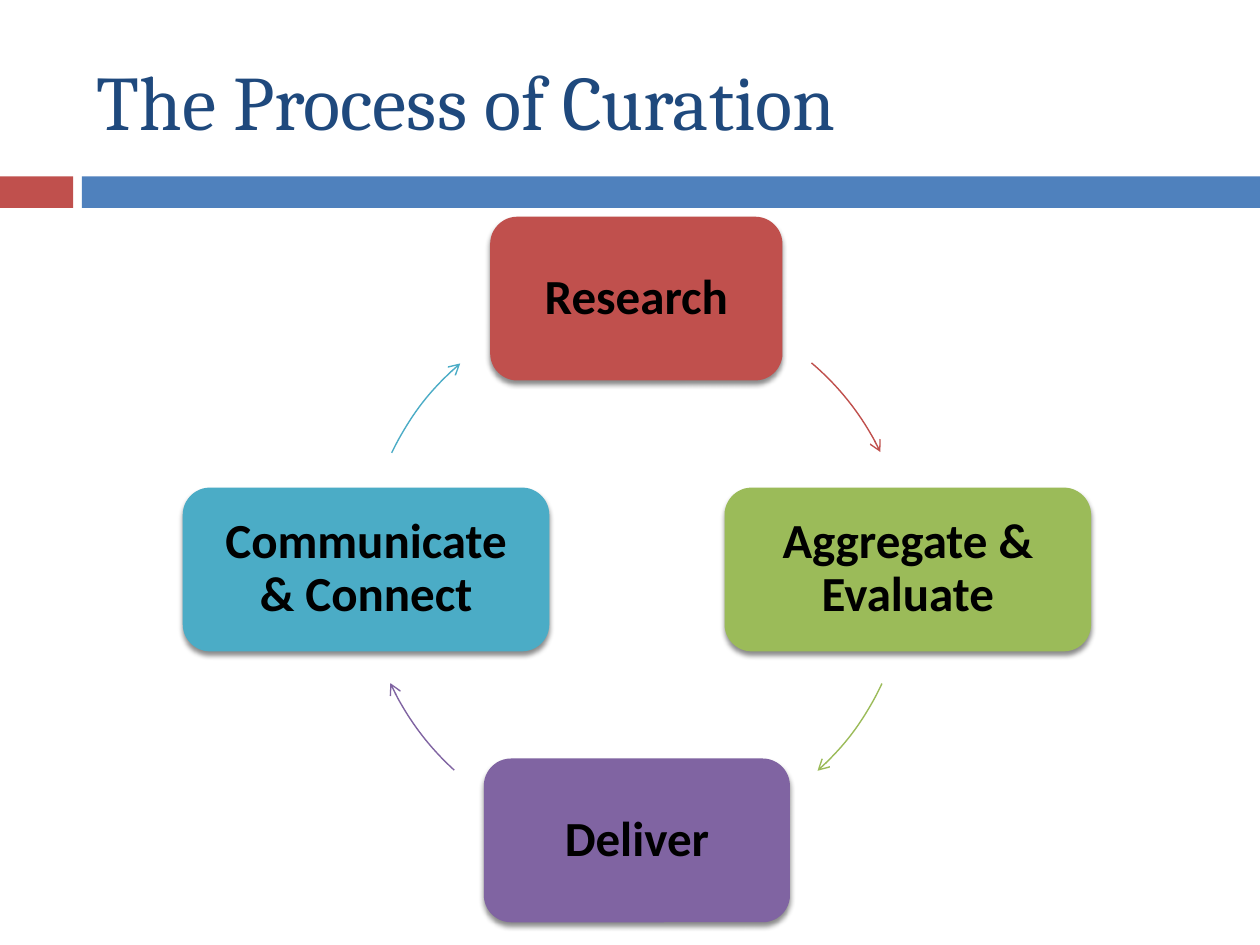
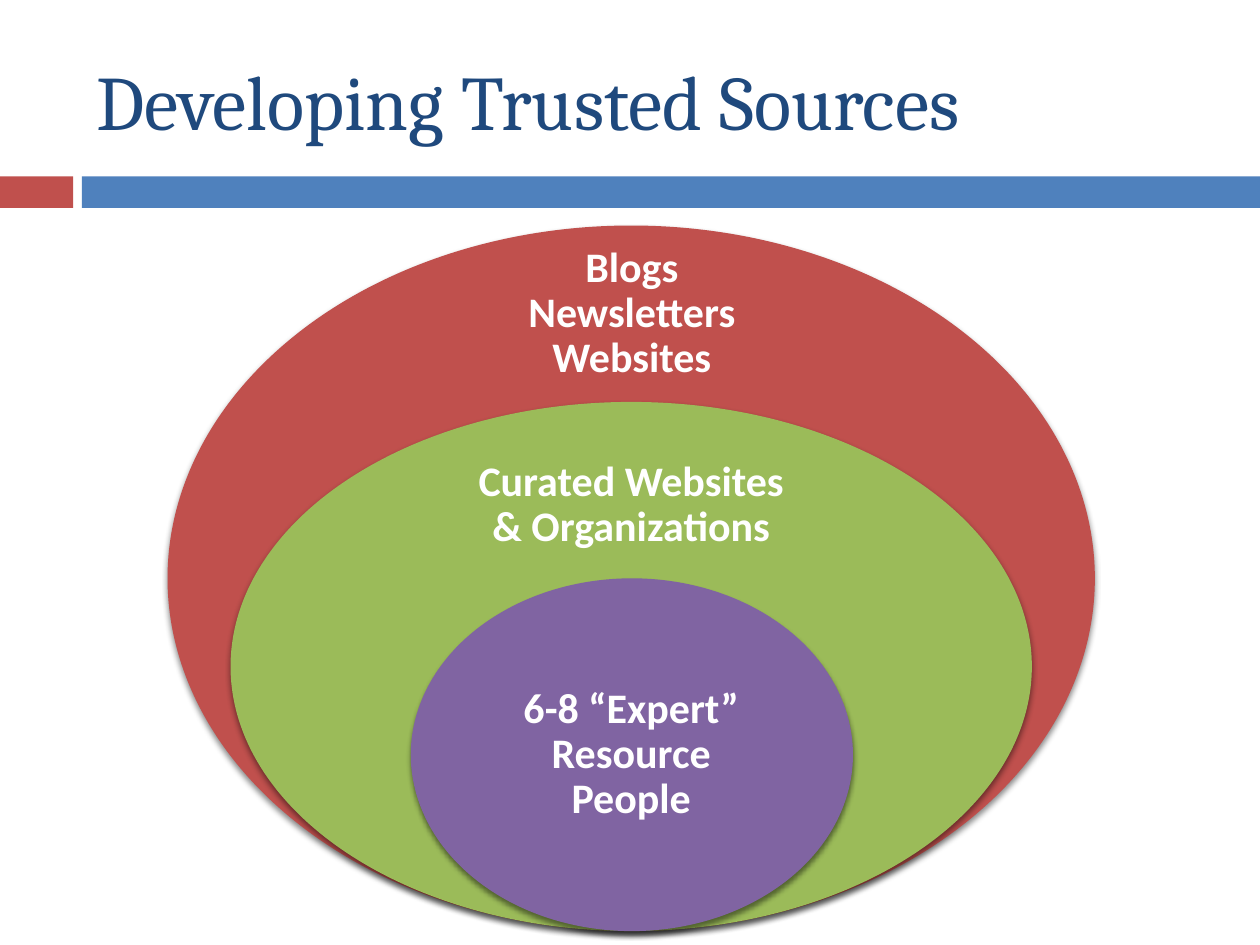
from dataclasses import dataclass

from lxml.etree import SubElement
from pptx import Presentation
from pptx.dml.color import RGBColor
from pptx.enum.shapes import MSO_SHAPE
from pptx.enum.text import MSO_ANCHOR, PP_ALIGN
from pptx.oxml.ns import qn
from pptx.util import Pt

PX = 9144  # EMU in one px, 100 px to the inch


@dataclass(frozen=True)
class Theme:
    red: str = "C0504D"
    blue: str = "4F81BD"
    green: str = "9BBB59"
    purple: str = "8064A2"
    teal: str = "4BACC6"
    navy: str = "1F497D"
    black: str = "000000"
    white: str = "FFFFFF"
    heading_font: str = "Cambria"
    body_font: str = "Calibri"
    title_size: int = 44
    step_size: int = 28
    source_size: int = 24
    arrow_width: float = 0.79


THEME = Theme()


def add_block(slide, preset, box, color, shadow=False):
    """Add a filled preset shape without outline, with a soft shadow below on request."""
    shape = slide.shapes.add_shape(preset, *[length * PX for length in box])
    shape.fill.solid()
    shape.fill.fore_color.rgb = RGBColor.from_string(color)
    shape.line.fill.background()
    shape.shadow.inherit = False
    if shadow:
        effects = shape._element.spPr.find(qn("a:effectLst"))
        outer = SubElement(effects, qn("a:outerShdw"), blurRad=str(Pt(3)),
                           dist=str(Pt(2.4)), dir="5400000", rotWithShape="0")
        shadow_color = SubElement(outer, qn("a:srgbClr"), val=THEME.black)
        SubElement(shadow_color, qn("a:alpha"), val="45000")
    return shape


def write_text(shape, text, *, size, color, font=THEME.body_font, bold=True,
               align=PP_ALIGN.CENTER, anchor=MSO_ANCHOR.MIDDLE, spacing=0.9, inset=12):
    frame = shape.text_frame
    frame.word_wrap = True
    frame.vertical_anchor = anchor
    frame.margin_left = frame.margin_right = inset * PX
    frame.margin_top = frame.margin_bottom = inset * PX
    paragraph = frame.paragraphs[0]
    paragraph.text = text
    paragraph.alignment = align
    paragraph.line_spacing = spacing
    paragraph.font.name = font
    paragraph.font.size = Pt(size)
    paragraph.font.bold = bold
    paragraph.font.color.rgb = RGBColor.from_string(color)


presentation = Presentation()
presentation.slide_width = 1000 * PX
presentation.slide_height = 750 * PX

# Shared frame: two bands and the title
slides = []
for title in ("The Process of Curation", "Developing Trusted Sources"):
    slide = presentation.slides.add_slide(presentation.slide_layouts[6])
    add_block(slide, MSO_SHAPE.RECTANGLE, (0, 140, 58, 25), THEME.red)
    add_block(slide, MSO_SHAPE.RECTANGLE, (65, 140, 935, 25), THEME.blue)
    title_box = slide.shapes.add_textbox(67 * PX, 25 * PX, 892 * PX, 108 * PX)
    write_text(title_box, title, size=THEME.title_size, color=THEME.navy,
               font=THEME.heading_font, bold=False, align=PP_ALIGN.LEFT,
               spacing=1.0, inset=10)
    slides.append(slide)
process_slide, sources_slide = slides

# Cycle: each step sits on a circle and an arc leads on to the next one
CENTER_X, CENTER_Y, RADIUS = 505, 452, 215
STEP_HEIGHT = 130
steps = [  # text, color, centre offset in radii, width, arc start and end in degrees
    ("Research", THEME.red, (0, -1), 232, (310.3, 334.3)),
    ("Aggregate & Evaluate", THEME.green, (1, 0), 291, (24.9, 48)),
    ("Deliver", THEME.purple, (0, 1), 243, (132.2, 155.2)),
    ("Communicate & Connect", THEME.teal, (-1, 0), 291, (205.5, 229.5)),
]
for text, color, (across, down), width, angles in steps:
    left = CENTER_X + across * RADIUS - width // 2
    top = CENTER_Y + down * RADIUS - STEP_HEIGHT // 2
    step = add_block(process_slide, MSO_SHAPE.ROUNDED_RECTANGLE,
                     (left, top, width, STEP_HEIGHT), color, shadow=True)
    write_text(step, text, size=THEME.step_size, color=THEME.black)

    circle_box = (CENTER_X - RADIUS, CENTER_Y - RADIUS, 2 * RADIUS, 2 * RADIUS)
    arrow = add_block(process_slide, MSO_SHAPE.ARC, circle_box, color)
    arrow.fill.background()
    arrow.line.color.rgb = RGBColor.from_string(color)
    arrow.line.width = Pt(THEME.arrow_width)
    for index, angle in enumerate(angles):
        arrow.adjustments[index] = angle * 0.6  # 60000ths of a degree over 100000
    SubElement(arrow.line._get_or_add_ln(), qn("a:tailEnd"), type="arrow")

# Nested ellipses resting on one bottom line
MIDDLE_X, BOTTOM = 501, 739
sources = [  # text, color, ellipse size, text box top and size, anchor
    ("Blogs Newsletters Websites", THEME.red, (736, 560),
     (207, 257, 84), MSO_ANCHOR.MIDDLE),
    ("Curated Websites & Organizations", THEME.green, (636, 420),
     (346, 296, 79), MSO_ANCHOR.TOP),
    ("6-8 “Expert” Resource People", THEME.purple, (351, 280),
     (529, 248, 140), MSO_ANCHOR.MIDDLE),
]
for text, color, (width, height), (text_top, text_width, text_height), anchor in sources:
    add_block(sources_slide, MSO_SHAPE.OVAL,
              (MIDDLE_X - width // 2, BOTTOM - height, width, height), color, shadow=True)
    label = sources_slide.shapes.add_textbox(
        (MIDDLE_X - text_width // 2) * PX, text_top * PX, text_width * PX, text_height * PX)
    write_text(label, text, size=THEME.source_size, color=THEME.white,
               anchor=anchor, inset=19)

presentation.save("out.pptx")
